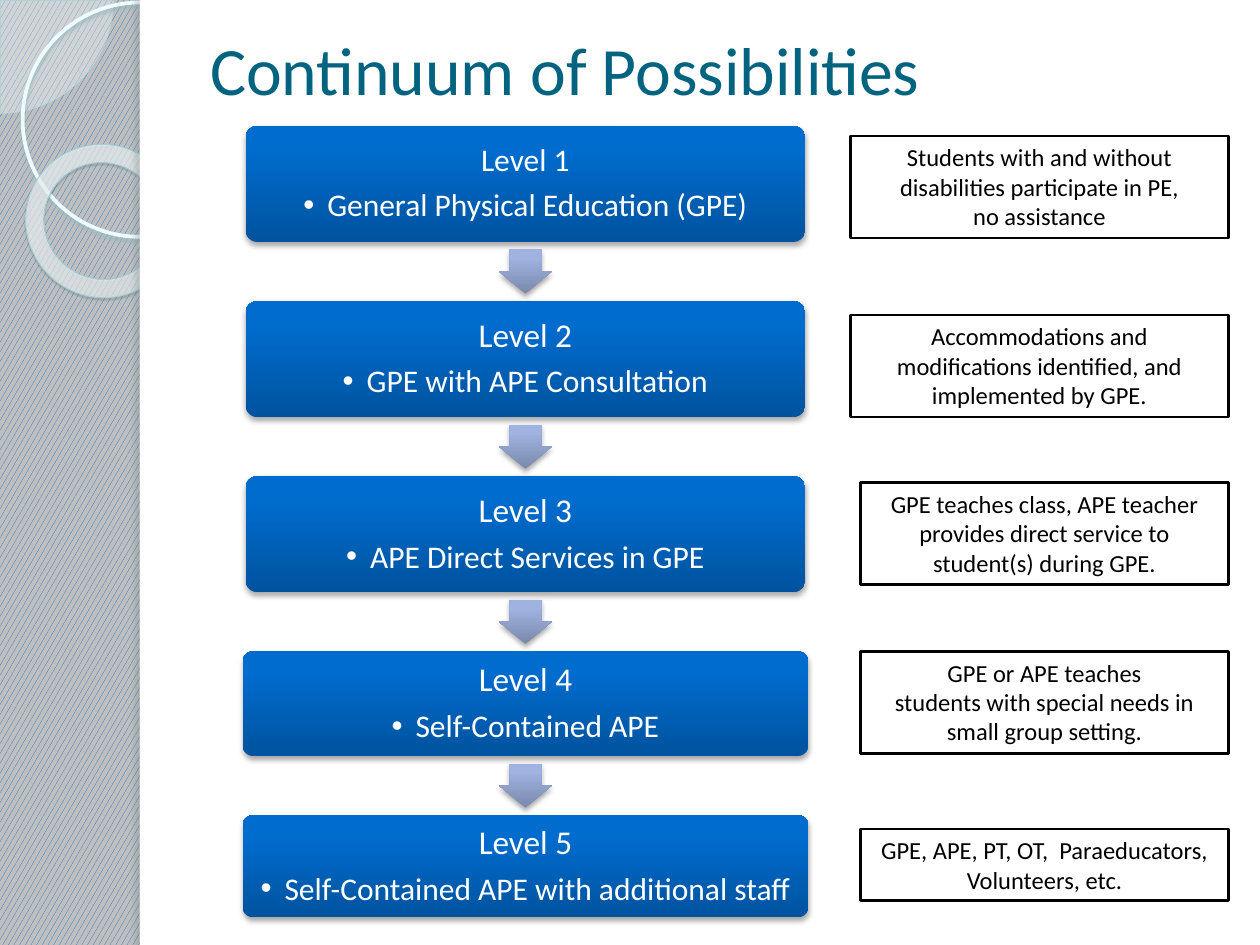
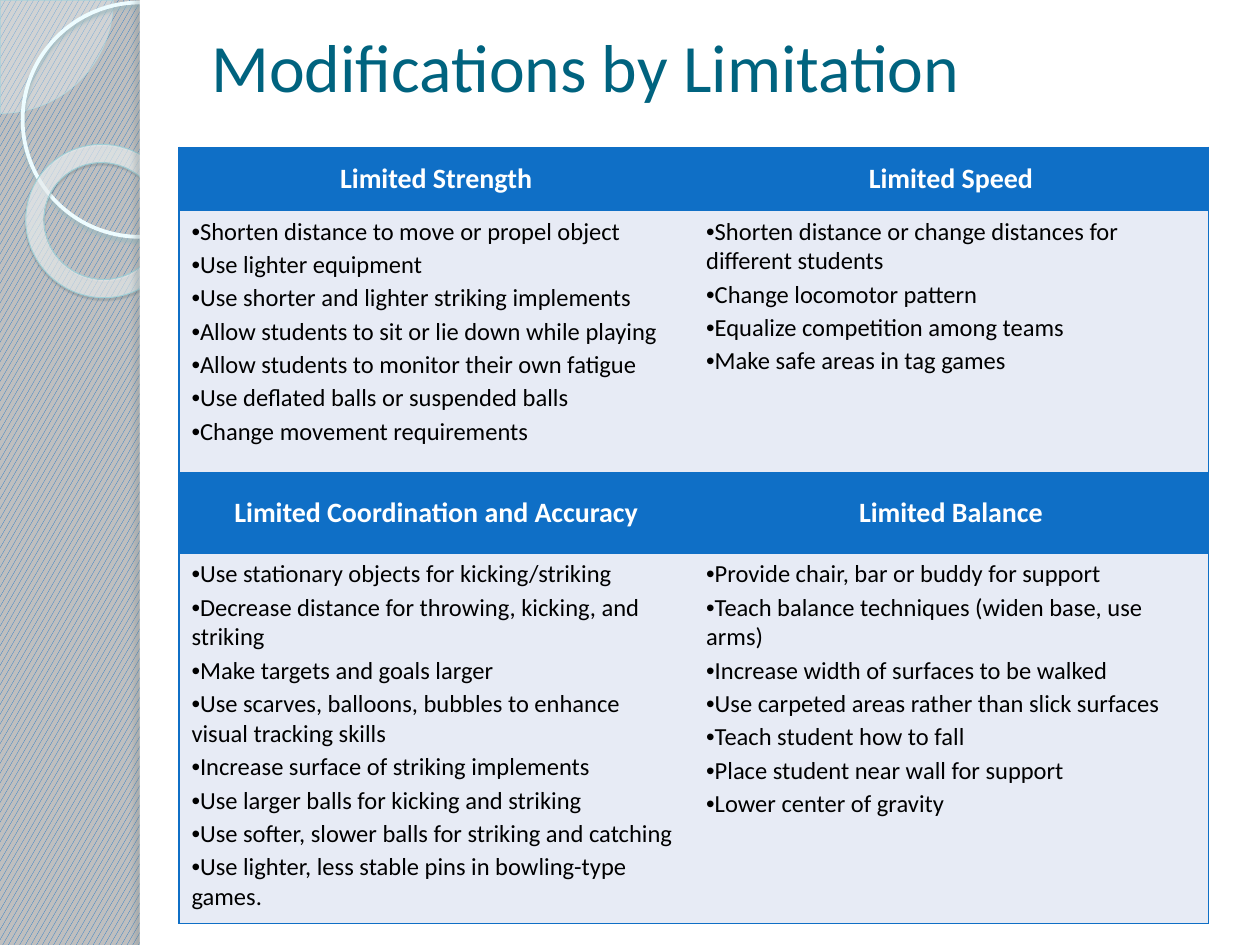
import lxml.etree
import pptx
import pptx.dml.color
import pptx.enum.dml
import pptx.enum.shapes
import pptx.enum.text
import pptx.oxml.ns
import pptx.util

RGB = pptx.dml.color.RGBColor
KIND = pptx.enum.shapes.MSO_SHAPE
ALIGN = pptx.enum.text.PP_ALIGN
ANCHOR = pptx.enum.text.MSO_ANCHOR
FIT = pptx.enum.text.MSO_AUTO_SIZE
Pt = pptx.util.Pt
qn = pptx.oxml.ns.qn

CELL = pptx.util.Inches(1)
COLS, ROWS = 10, 7.5
FONT = "Calibri"

BLUE = RGB(0x0F, 0x6F, 0xC6)
GRAY = RGB(0xBF, 0xBF, 0xBF)
TEAL = RGB(0x00, 0x63, 0x7F)
PALE = RGB(0xE7, 0xEB, 0xF5)
WHITE = RGB(0xFF, 0xFF, 0xFF)
BLACK = RGB(0x00, 0x00, 0x00)
MIST = RGB(0xF8, 0xFE, 0xFF)
ICE = RGB(0xED, 0xFC, 0xFF)
PIE_EDGE = RGB(0xAF, 0xDB, 0xE2)
RING_EDGE = RGB(0xA1, 0xCF, 0xD6)
HOOP_SHADE = RGB(0x9C, 0xB9, 0xBE)
RING_SHADE = RGB(0x4B, 0x5E, 0x61)
EDGE_SHADE = RGB(0x6C, 0x7A, 0x7C)

RING_STOPS = [(0, RGB(0xF9, 0xFE, 0xFF), 70), (70, RGB(0xFD, 0xFF, 0xFF), 55),
              (100, RGB(0x9E, 0xF2, 0xFF), 60)]
STEP_STOPS = [(0, RGB(0x00, 0x53, 0x9F), 100), (80, RGB(0x00, 0x6C, 0xCE), 100),
              (100, RGB(0x00, 0x6D, 0xCF), 100)]
ARROW_STOPS = [(0, RGB(0x7A, 0x89, 0xAC), 100), (80, RGB(0x9F, 0xB2, 0xE0), 100),
               (100, RGB(0x9E, 0xB2, 0xE2), 100)]
SOFT = (BLACK, 35, 3.1, 1.8, 90)

PANEL = 1.11
STEP_MID, STEP_TOP, STEP_GAP = 4.17, 1.0, 0.47
STEPS = [
    ("General Physical Education (GPE)", 18, 4.44, 0.92),
    ("GPE with APE Consultation", 19, 4.44, 0.92),
    ("APE Direct Services in GPE", 19, 4.44, 0.92),
    ("Self-Contained APE", 19, 4.49, 0.83),
    ("Self-Contained APE with additional staff", 19, 4.49, 0.81),
]
NOTE_RIGHT = 9.75
NOTES = [
    (1.08, 3, 0.81, ["Students with and without disabilities participate in PE,",
                     "no assistance"]),
    (2.5, 3, 0.81, ["Accommodations and modifications identified, and implemented by GPE."]),
    (3.83, 2.92, 0.81, ["GPE teaches class, APE teacher provides direct service to "
                        "student(s) during GPE."]),
    (5.17, 2.92, 0.81, ["GPE or APE teaches",
                        "students with special needs in small group setting."]),
    (6.58, 2.92, 0.57, ["GPE, APE, PT, OT,  Paraeducators, Volunteers, etc."]),
]
LIMITS = [
    (1.17, (0.5, 2.08), {
        "Limited Strength": [
            "Shorten distance to move or propel object",
            "Use lighter equipment",
            "Use shorter and lighter striking implements",
            "Allow students to sit or lie down while playing",
            "Allow students to monitor their own fatigue",
            "Use deflated balls or suspended balls",
            "Change movement requirements"],
        "Limited Speed": [
            "Shorten distance or change distances for different students",
            "Change locomotor pattern",
            "Equalize competition among teams",
            "Make safe areas in tag games"]}),
    (3.75, (0.64, 2.94), {
        "Limited Coordination and Accuracy": [
            "Use stationary objects for kicking/striking",
            "Decrease distance for throwing, kicking, and striking",
            "Make targets and goals larger",
            "Use scarves, balloons, bubbles to enhance visual tracking skills",
            "Increase surface of striking implements",
            "Use larger balls for kicking and striking",
            "Use softer, slower balls for striking and catching",
            "Use lighter, less stable pins in bowling-type games."],
        "Limited Balance": [
            "Provide chair, bar or buddy for support",
            "Teach balance techniques (widen base, use arms)",
            "Increase width of surfaces to be walked",
            "Use carpeted areas rather than slick surfaces",
            "Teach student how to fall",
            "Place student near wall for support",
            "Lower center of gravity"]}),
]


def grid(*cells):
    """Turn grid cells into lengths."""
    return [round(n * CELL) for n in cells]


def node(parent, tag, **attrs):
    """Append an XML element with the given attributes."""
    item = lxml.etree.SubElement(parent, qn(tag))
    for key, value in attrs.items():
        item.set(key, str(value))
    return item


def tint(parent, color, alpha=100):
    """Append a colour, see-through when alpha is below 100."""
    item = node(parent, "a:srgbClr", val=color)
    if alpha < 100:
        node(item, "a:alpha", val=alpha * 1000)


def draw(slide, kind, box, fill=None, line=None, shade=None, adjust=()):
    """Add a preset shape with its fill, line and shadow."""
    shape = slide.shapes.add_shape(kind, *grid(*box))
    for i, value in enumerate(adjust):
        shape.adjustments[i] = value
    if fill is None:
        shape.fill.background()
    else:
        shape.fill.solid()
        shape.fill.fore_color.rgb = fill
    if line:
        shape.line.color.rgb = line[0]
        shape.line.width = Pt(line[1])
    else:
        shape.line.fill.background()
    shape.shadow.inherit = False
    if shade:
        color, alpha, blur, dist, angle = shade
        effects = shape.element.spPr.find(qn("a:effectLst"))
        drop = node(effects, "a:outerShdw", blurRad=Pt(blur), dist=Pt(dist),
                    dir=angle * 60000, algn="ctr", rotWithShape=0)
        tint(drop, color, alpha)
    return shape


def blend(shape, stops, focus=None):
    """Fill a shape with a linear or a round gradient."""
    shape.fill.gradient()
    grad = shape.element.spPr.find(qn("a:gradFill"))
    grad.clear()
    grad.set("rotWithShape", "1" if focus else "0")
    group = node(grad, "a:gsLst")
    for place, color, alpha in stops:
        tint(node(group, "a:gs", pos=place * 1000), color, alpha)
    if focus:
        sides = {side: share * 1000 for side, share in zip("ltrb", focus)}
        node(node(grad, "a:path", path="circle"), "a:fillToRect", **sides)
    else:
        node(grad, "a:lin", ang=270 * 60000, scaled=0)


def write(frame, texts, size, color, align=ALIGN.CENTER, bold=False):
    """Write one paragraph per text and return the paragraphs."""
    for i, text in enumerate(texts):
        para = frame.paragraphs[0] if i == 0 else frame.add_paragraph()
        para.alignment = align
        run = para.add_run()
        run.text = text
        run.font.name = FONT
        run.font.size = Pt(size)
        run.font.bold = bold
        run.font.color.rgb = color
    return frame.paragraphs


def bullet(para, hang=0):
    """Give a paragraph a bullet with a hanging indent."""
    props = para._p.get_or_add_pPr()
    props.set("marL", str(round(hang * CELL)))
    props.set("indent", str(round(-hang * CELL)))
    node(props, "a:buFont", typeface="Arial")
    node(props, "a:buChar", char="•")


def start(deck, title, left, height):
    """Add a slide with the side band and a title."""
    slide = deck.slides.add_slide(deck.slide_layouts[6])
    back = slide.background.fill
    back.patterned()
    back.pattern = pptx.enum.dml.MSO_PATTERN.LARGE_CONFETTI
    back.fore_color.rgb = BLUE
    back.back_color.rgb = GRAY
    pie = draw(slide, KIND.PIE, (-0.89, -0.89, 1.79, 1.79), MIST, (PIE_EDGE, 0.25),
               adjust=(0, 54.02))
    color = pie.element.spPr.find(qn("a:solidFill"))[0]
    node(color, "a:alpha", val=33000)
    draw(slide, KIND.OVAL, (0.18, 0.02, 1.86, 1.86), line=(ICE, 2.15),
         shade=(HOOP_SHADE, 85, 2, 2, 90))
    ring = draw(slide, KIND.DONUT, (0.2, 1.15, 1.23, 1.21), MIST, (RING_EDGE, 0.58),
                (RING_SHADE, 35, 1, 1.2, 75), (0.12,))
    ring.rotation = 38.6
    blend(ring, RING_STOPS, (-408, -50, 508, 150))
    draw(slide, KIND.RECTANGLE, (PANEL, 0, COLS - PANEL, ROWS), WHITE)
    draw(slide, KIND.RECTANGLE, (PANEL, 0, 0.08, ROWS), WHITE,
         shade=(EDGE_SHADE, 25, 3, 3, 180))
    frame = slide.shapes.add_textbox(*grid(left, 0.17, 8.2, height)).text_frame
    frame.word_wrap = True
    frame.vertical_anchor = ANCHOR.MIDDLE
    write(frame, [title], 38.7, TEAL, ALIGN.LEFT)
    return slide


def step(slide, top, level, text, size, width, height):
    """Add one level of the chain."""
    box = (STEP_MID - width / 2, top, width, height)
    shape = draw(slide, KIND.ROUNDED_RECTANGLE, box, BLUE, shade=SOFT, adjust=(0.1,))
    blend(shape, STEP_STOPS)
    frame = shape.text_frame
    frame.word_wrap = True
    frame.vertical_anchor = ANCHOR.MIDDLE
    frame.margin_left = frame.margin_right = round(0.09 * CELL)
    frame.margin_top = frame.margin_bottom = round(0.09 * CELL)
    head, body = write(frame, [f"Level {level}", text], size, WHITE)
    body.runs[0].font.size = Pt(18)
    head.line_spacing = body.line_spacing = 0.9
    head.space_after = Pt(6.5)
    body.space_after = Pt(3)
    bullet(body, 0.19)


def arrow(slide, middle):
    """Add a downward block arrow centred in a gap."""
    wide, tall = 0.35, 0.42
    shape = draw(slide, KIND.RIGHT_ARROW,
                 (STEP_MID - wide / 2, middle - tall / 2, wide, tall),
                 BLUE, shade=SOFT, adjust=(0.6, 0.5))
    shape.rotation = 90
    blend(shape, ARROW_STOPS)


def remark(slide, top, width, height, texts):
    """Add an outlined note beside a level."""
    shape = draw(slide, KIND.RECTANGLE, (NOTE_RIGHT - width, top, width, height),
                 line=(BLACK, 1.5))
    frame = shape.text_frame
    frame.word_wrap = True
    frame.auto_size = FIT.SHAPE_TO_FIT_TEXT
    frame.vertical_anchor = ANCHOR.TOP
    write(frame, texts, 14, BLACK)


def border(cell, sides):
    """Line the named sides of a cell and clear the others."""
    props = cell._tc.get_or_add_tcPr()
    for side in "LRTB":
        line = node(props, f"a:ln{side}", w=Pt(1))
        if side in sides:
            tint(node(line, "a:solidFill"), BLUE)
        else:
            node(line, "a:noFill")


def table(slide, top, heights, limits):
    """Add a table with a heading and a list in each column."""
    frame = slide.shapes.add_table(2, 2, *grid(1.42, top, 8.17, sum(heights)))
    chart = frame.table
    chart.first_row = chart.horz_banding = False
    for row, height in zip(chart.rows, heights):
        row.height = round(height * CELL)
    for col, (title, items) in enumerate(limits.items()):
        head, body = chart.cell(0, col), chart.cell(1, col)
        for cell, fill in ((head, BLUE), (body, PALE)):
            border(cell, ("LTB", "RTB")[col])
            cell.fill.solid()
            cell.fill.fore_color.rgb = fill
        head.vertical_anchor = ANCHOR.MIDDLE
        write(head.text_frame, [title], 16, WHITE, bold=True)
        for para in write(body.text_frame, items, 14, BLACK, ALIGN.LEFT):
            para.space_before = Pt(2)
            bullet(para)


def main():
    """Build both slides and save the deck."""
    deck = pptx.Presentation()
    deck.slide_width, deck.slide_height = grid(COLS, ROWS)

    slide = start(deck, "Continuum of Possibilities", 1.57, 0.75)
    top = STEP_TOP
    for level, (text, size, width, height) in enumerate(STEPS, 1):
        step(slide, top, level, text, size, width, height)
        top += height + STEP_GAP
        if level < len(STEPS):
            arrow(slide, top - STEP_GAP / 2)
    for note in NOTES:
        remark(slide, *note)

    slide = start(deck, "Modifications by Limitation", 1.58, 0.7)
    for limit in LIMITS:
        table(slide, *limit)
    deck.save("out.pptx")


if __name__ == "__main__":
    main()
